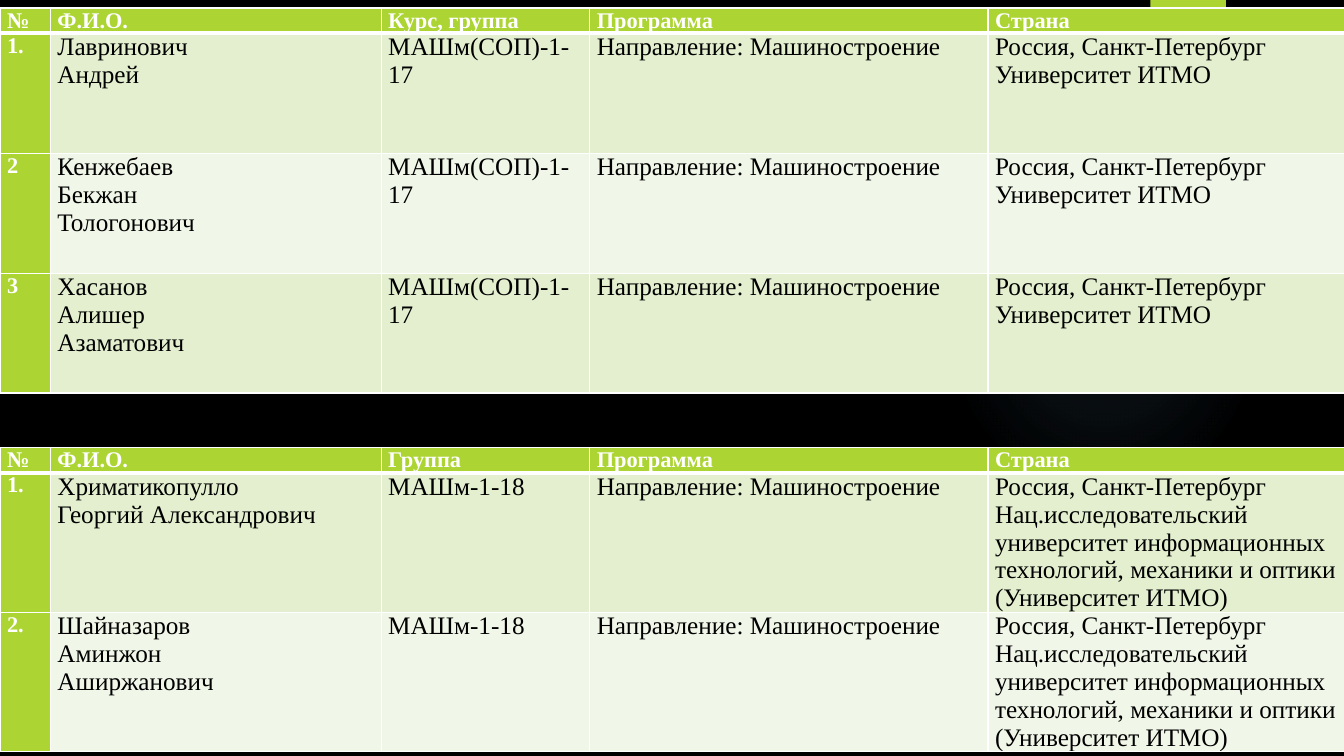
from dataclasses import dataclass

from lxml.etree import SubElement
from pptx import Presentation
from pptx.dml.color import RGBColor as RGB
from pptx.enum.shapes import MSO_SHAPE as Shape
from pptx.oxml import parse_xml
from pptx.oxml.ns import nsdecls, qn
from pptx.util import Inches, Pt


@dataclass(frozen=True)
class Theme:
    font: str = "Times New Roman"
    head_size: int = 16
    body_size: int = 18
    back: str = "000000"
    ink: str = "000000"
    white: str = "FFFFFF"
    accent: str = "ACD433"
    glow: str = "7AC4F0"
    bands: tuple = ("E3EFCE", "F1F7E8")
    thin: int = 1
    thick: int = 3


THEME = Theme()

# Grid shared by both tables, in inches
COLUMNS = (0.5, 3.28, 2.07, 3.95, 3.54)
HEAD_ROW = 0.25
SIDE_INSET = 0.07

PROGRAM = "Направление: Машиностроение"
CITY = "Россия, Санкт-Петербург"
SHORT_PLACE = f"{CITY}\nУниверситет ИТМО"
LONG_PLACE = (f"{CITY}\nНац.исследовательский университет информационных "
              "технологий, механики и оптики\n(Университет ИТМО)")


def add_text(tf, text, size, color, bold=False):
    for i, line in enumerate(text.split("\n")):
        p = tf.paragraphs[0] if i == 0 else tf.add_paragraph()
        r = p.add_run()
        r.text = line
        r.font.name = THEME.font
        r.font.size = Pt(size)
        r.font.bold = bold
        r.font.color.rgb = RGB.from_string(color)


def add_shape(slide, kind, *box):
    s = slide.shapes.add_shape(kind, *map(Inches, box))
    s.shadow.inherit = False
    s.line.fill.background()
    return s


def add_glow(slide, *box):
    s = add_shape(slide, Shape.OVAL, *box)
    stops = "".join(
        f'<a:gs pos="{pos * 1000}"><a:srgbClr val="{THEME.glow}">'
        f'<a:alpha val="{alpha * 1000}"/></a:srgbClr></a:gs>'
        for pos, alpha in ((0, 7), (36, 6), (69, 0), (100, 0)))
    s.fill.background()
    no_fill = s._element.spPr.find(qn("a:noFill"))
    no_fill.getparent().replace(no_fill, parse_xml(
        f'<a:gradFill {nsdecls("a")}><a:gsLst>{stops}</a:gsLst>'
        '<a:path path="circle"><a:fillToRect l="50000" t="50000" '
        'r="50000" b="50000"/></a:path></a:gradFill>'))


def set_borders(cell, top, bottom):
    tc_pr = cell._tc.get_or_add_tcPr()
    widths = {"lnL": THEME.thin, "lnR": THEME.thin, "lnT": top, "lnB": bottom}
    for side, width in widths.items():
        line = SubElement(tc_pr, qn(f"a:{side}"), w=str(Pt(width)))
        fill = SubElement(line, qn("a:solidFill"))
        SubElement(fill, qn("a:srgbClr"), val=THEME.white)


def fill_cell(cell, text, row, col):
    cell.margin_left = cell.margin_right = Inches(SIDE_INSET)
    cell.margin_top = cell.margin_bottom = 0
    # Borders precede the fill in the cell properties
    set_borders(cell, top=THEME.thick if row == 1 else THEME.thin,
                bottom=THEME.thick if row == 0 else THEME.thin)
    heading = row == 0 or col == 0
    color = THEME.accent if heading else THEME.bands[(row - 1) % 2]
    cell.fill.solid()
    cell.fill.fore_color.rgb = RGB.from_string(color)
    if heading:
        add_text(cell.text_frame, text, THEME.head_size, THEME.white, bold=True)
    else:
        add_text(cell.text_frame, text, THEME.body_size, THEME.ink)


def add_student_table(slide, top, row_height, group_title, group, place, students):
    rows = [("№", "Ф.И.О.", group_title, "Программа", "Страна")]
    rows += [(number, name, group, PROGRAM, place) for number, name in students]
    height = HEAD_ROW + row_height * len(students)
    table = slide.shapes.add_table(
        len(rows), len(COLUMNS), 0, Inches(top),
        Inches(sum(COLUMNS)), Inches(height)).table
    for column, width in zip(table.columns, COLUMNS):
        column.width = Inches(width)
    for i, texts in enumerate(rows):
        table.rows[i].height = Inches(row_height if i else HEAD_ROW)
        for j, text in enumerate(texts):
            fill_cell(table.cell(i, j), text, i, j)


def main():
    prs = Presentation()
    prs.slide_width, prs.slide_height = Inches(13.33), Inches(7.5)
    slide = prs.slides.add_slide(prs.slide_layouts[6])
    slide.background.fill.solid()
    slide.background.fill.fore_color.rgb = RGB.from_string(THEME.back)

    # Backdrop: soft glow and top tab
    add_glow(slide, 9.41, 1.83, 3.08, 3.08)
    tab = add_shape(slide, Shape.RECTANGLE, 11.41, 0, 0.75, 1.25)
    tab.fill.solid()
    tab.fill.fore_color.rgb = RGB.from_string(THEME.accent)

    # Students of 2017
    add_student_table(
        slide, 0.08, 1.19, "Курс, группа", "МАШм(СОП)-1-17", SHORT_PLACE,
        [("1.", "Лавринович\nАндрей"),
         ("2", "Кенжебаев\nБекжан\nТологонович"),
         ("3", "Хасанов\nАлишер\nАзаматович")])

    # Students of 2018
    add_student_table(
        slide, 4.44, 1.38, "Группа", "МАШм-1-18", LONG_PLACE,
        [("1.", "Хриматикопулло\nГеоргий Александрович"),
         ("2.", "Шайназаров\nАминжон\nАширжанович")])

    prs.save("out.pptx")


if __name__ == "__main__":
    main()
